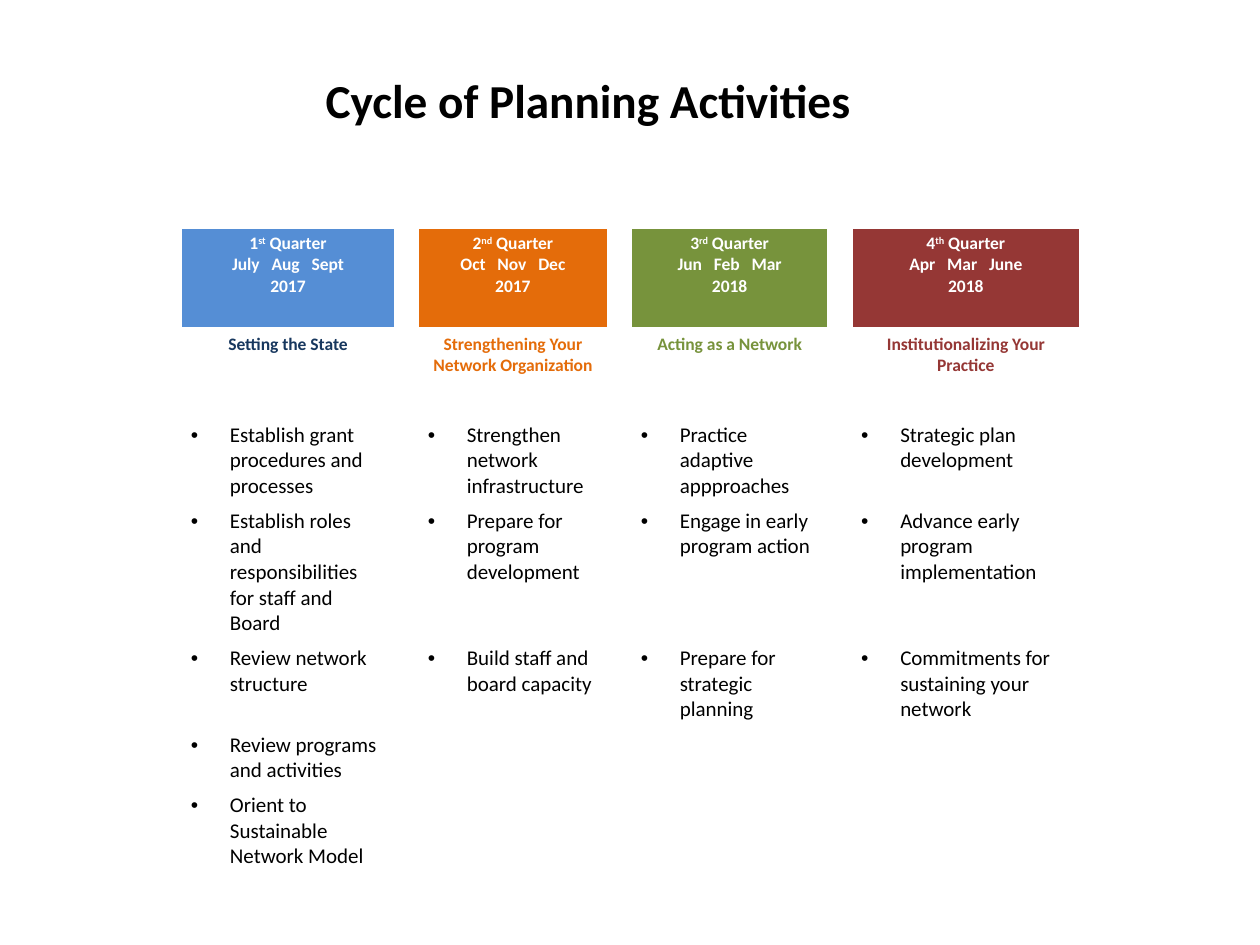
from lxml.etree import SubElement
from pptx import Presentation
from pptx.dml.color import RGBColor
from pptx.enum.text import MSO_ANCHOR, PP_ALIGN
from pptx.oxml.ns import qn
from pptx.util import Pt

# Content: one entry per quarter
TITLE = "Cycle of Planning Activities"
QUARTERS = [
    {"number": ("1", "st"), "months": ["July", "Aug", "Sept"], "year": "2017",
     "theme": "Setting the State", "fill": "558ED5", "ink": "17375E", "width": 121.7,
     "activities": ["Establish grant procedures and processes",
                    "Establish roles and responsibilities for staff and Board",
                    "Review network structure",
                    "Review programs and activities",
                    "Orient to Sustainable Network Model"]},
    {"number": ("2", "nd"), "months": ["Oct", "Nov", "Dec"], "year": "2017",
     "theme": "Strengthening Your Network Organization",
     "fill": "E46C0A", "ink": "E46C0A", "width": 108,
     "activities": ["Strengthen network infrastructure",
                    "Prepare for program development",
                    "Build staff and board capacity"]},
    {"number": ("3", "rd"), "months": ["Jun", "Feb", "Mar"], "year": "2018",
     "theme": "Acting as a Network", "fill": "77933C", "ink": "77933C", "width": 112.3,
     "activities": ["Practice adaptive appproaches",
                    "Engage in early program action",
                    "Prepare for strategic planning"]},
    {"number": ("4", "th"), "months": ["Apr", "Mar", "June"], "year": "2018",
     "theme": "Institutionalizing Your Practice",
     "fill": "953735", "ink": "953735", "width": 130.3,
     "activities": ["Strategic plan development",
                    "Advance early program implementation",
                    "Commitments for sustaining your network"]},
]

THEME = {"font": "Calibri", "title": 27, "head": 10, "body": 12,
         "black": "000000", "white": "FFFFFF"}
LEFT, TOP, GAP = 103.7, 130.5, 13.7
ROWS = [57.6, 50.4, 49, 49, 49, 33.8, 49]
INDENT = 22.3
MONTH_GAP = 4.5  # extra points after each month


def style(r, size, color, bold=False):
    r.font.name = THEME["font"]
    r.font.size = Pt(size)
    r.font.bold = bold
    r.font.color.rgb = RGBColor.from_string(color)


def add_runs(p, pieces, color):
    """Add bold heading runs, each with its own extra run attributes."""
    p.alignment = PP_ALIGN.CENTER
    for text, attributes in pieces:
        r = p.add_run()
        r.text = text
        style(r, THEME["head"], color, True)
        for name, value in attributes.items():
            r._r.get_or_add_rPr().set(name, value)


def add_bullet(p, text):
    p.text = text
    pPr = p._p.get_or_add_pPr()
    pPr.set("marL", str(Pt(INDENT)))
    pPr.set("indent", str(-Pt(INDENT)))
    SubElement(pPr, qn("a:buFont"), typeface="Arial")
    SubElement(pPr, qn("a:buChar"), char="•")
    style(p.runs[0], THEME["body"], THEME["black"])


def format_cell(cell, bottom):
    cell.margin_left = cell.margin_right = Pt(5.4)
    cell.margin_top = cell.margin_bottom = Pt(2.7)
    tcPr = cell._tc.get_or_add_tcPr()
    for side, width in (("L", 1), ("R", 1), ("T", 1), ("B", bottom)):
        ln = SubElement(tcPr, qn(f"a:ln{side}"), w=str(Pt(width)))
        SubElement(SubElement(ln, qn("a:solidFill")), qn("a:srgbClr"), val=THEME["white"])
    cell.fill.background()


prs = Presentation()
prs.slide_width, prs.slide_height = Pt(720), Pt(540)
s = prs.slides.add_slide(prs.slide_layouts[5])

# Title
title = s.shapes.title
title.left, title.top, title.width, title.height = Pt(24), Pt(12), Pt(624), Pt(90)
tf = title.text_frame
tf.text = TITLE
tf.vertical_anchor = MSO_ANCHOR.MIDDLE
tf.paragraphs[0].alignment = PP_ALIGN.CENTER
style(tf.paragraphs[0].runs[0], THEME["title"], THEME["black"], True)

# Table grid: quarter columns with narrow gap columns between them
widths = [w for q in QUARTERS for w in (q["width"], GAP)][:-1]
table = s.shapes.add_table(len(ROWS), len(widths), Pt(LEFT), Pt(TOP),
                           Pt(sum(widths)), Pt(sum(ROWS))).table
table.first_row = table.horz_banding = False
for column, width in zip(table.columns, widths):
    column.width = Pt(width)
for i, (row, height) in enumerate(zip(table.rows, ROWS)):
    row.height = Pt(height)
    for cell in row.cells:
        format_cell(cell, 3 if i == 0 else 1)

# Quarter contents
for i, q in enumerate(QUARTERS):
    col = 2 * i
    head = table.cell(0, col)
    head.fill.solid()
    head.fill.fore_color.rgb = RGBColor.from_string(q["fill"])
    digit, suffix = q["number"]
    spaced = {"spc": str(int(MONTH_GAP * 100))}
    months = [piece for m in q["months"] for piece in ((m, {}), (" ", spaced))][:-1]
    lines = [[(digit, {}), (suffix, {"baseline": "30000"}), (" Quarter", {})],
             months, [(q["year"], {})]]
    tf = head.text_frame
    for n, line in enumerate(lines):
        add_runs(tf.add_paragraph() if n else tf.paragraphs[0], line, THEME["white"])

    add_runs(table.cell(1, col).text_frame.paragraphs[0], [(q["theme"], {})], q["ink"])
    for n, activity in enumerate(q["activities"], start=2):
        add_bullet(table.cell(n, col).text_frame.paragraphs[0], activity)

prs.save("out.pptx")
